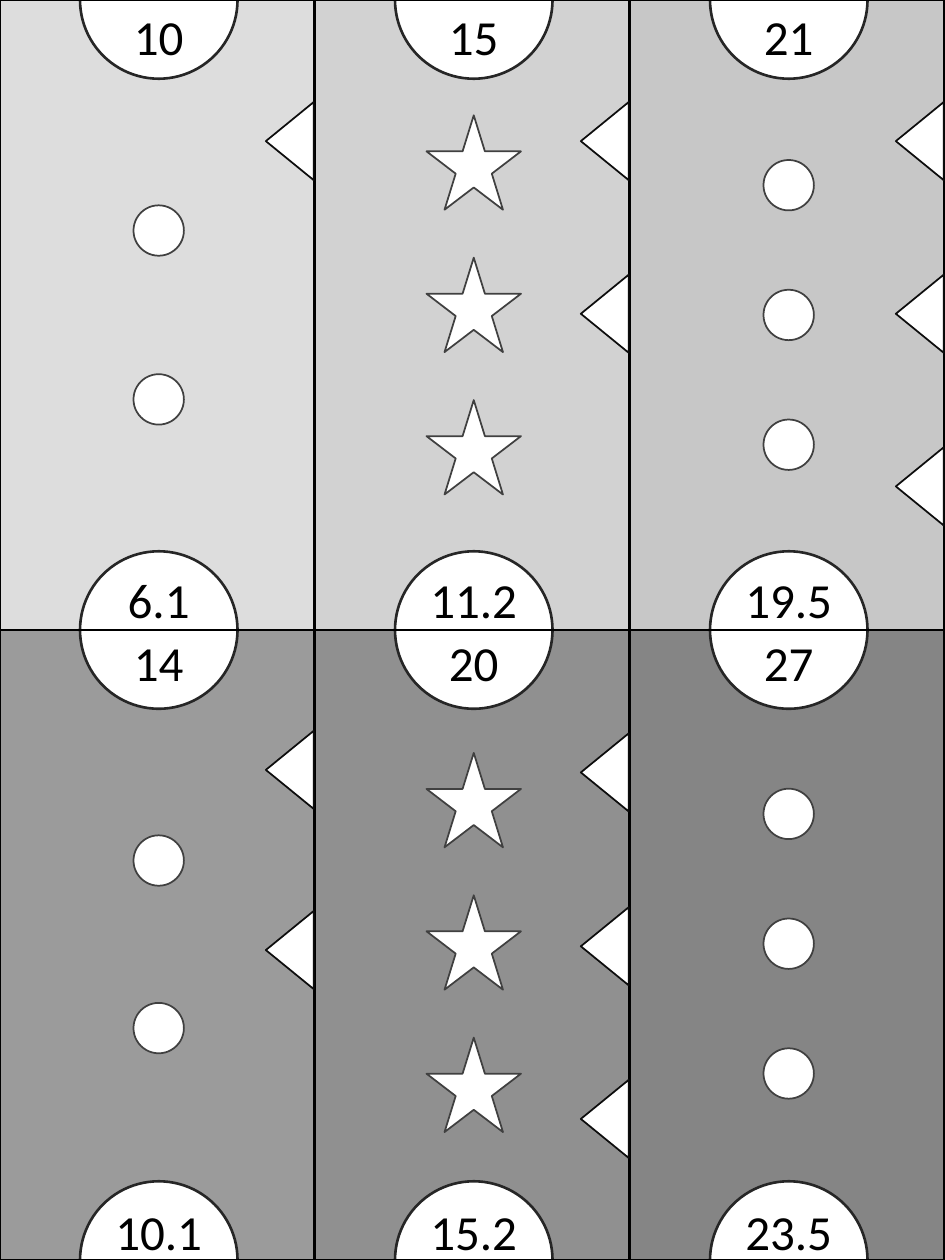
import dataclasses

import lxml.etree
import pptx
import pptx.dml.color
import pptx.enum.shapes
import pptx.enum.text
import pptx.oxml.ns
import pptx.util


@dataclasses.dataclass(frozen=True)
class Theme:
    shades: tuple = (("DDDDDD", "D2D2D2", "C7C7C7"), ("9B9B9B", "909090", "858585"))
    white: str = "FFFFFF"
    black: str = "000000"
    disc_line: str = "262626"
    marker_line: str = "404040"
    notch_line: str = "0D0D0D"
    font: str = "Calibri"
    number_size: float = 28
    thin: float = 1
    thick: float = 1.5


theme = Theme()
color = pptx.dml.color.RGBColor.from_string
inches = pptx.util.Inches
kinds = pptx.enum.shapes.MSO_SHAPE

deck = pptx.Presentation()
deck.slide_width, deck.slide_height = inches(7.5), inches(10)
page = deck.slides.add_slide(deck.slide_layouts[6])
column_width = deck.slide_width.inches / 3
row_height = deck.slide_height.inches / 2


def add_grid(left, shades):
    grid = page.shapes.add_table(
        2, 3, inches(left), 0, deck.slide_width, deck.slide_height
    ).table
    grid.first_row = grid.horz_banding = False
    for row in range(2):
        grid.rows[row].height = inches(row_height)
        for column in range(3):
            cell = grid.cell(row, column)
            properties = cell._tc.get_or_add_tcPr()
            for side in ("a:lnL", "a:lnR", "a:lnT", "a:lnB"):
                border = lxml.etree.SubElement(
                    properties, pptx.oxml.ns.qn(side), w=str(pptx.util.Pt(theme.thin))
                )
                paint = lxml.etree.SubElement(border, pptx.oxml.ns.qn("a:solidFill"))
                lxml.etree.SubElement(paint, pptx.oxml.ns.qn("a:srgbClr"), val=theme.black)
            if shades:
                cell.fill.solid()
                cell.fill.fore_color.rgb = color(shades[row][column])
            else:
                cell.fill.background()


def add_mark(kind, center_x, center_y, width, height, line, weight, rotation=0):
    mark = page.shapes.add_shape(
        kind,
        inches(center_x - width / 2),
        inches(center_y - height / 2),
        inches(width),
        inches(height),
    )
    mark.rotation = rotation
    mark.shadow.inherit = False
    mark.fill.solid()
    mark.fill.fore_color.rgb = color(theme.white)
    mark.line.color.rgb = color(line)
    mark.line.width = pptx.util.Pt(weight)


add_grid(0, theme.shades)
for row in range(3):
    for column in range(3):
        add_mark(
            kinds.OVAL, (column + 0.5) * column_width + 0.01, row * row_height,
            1.25, 1.25, theme.disc_line, theme.thick,
        )
add_grid(-0.01, None)

number_tops = ((0, 4.47), (-0.03, 4.49))
cards = (
    (0, 0, ("10", "6.1"), kinds.OVAL, 0.4, (1.83, 3.17), (1.12,)),
    (0, 1, ("15", "11.2"), kinds.STAR_5_POINT, 0.75, (1.29, 2.42, 3.55), (1.12, 2.49)),
    (0, 2, ("21", "19.5"), kinds.OVAL, 0.4, (1.47, 2.5, 3.53), (1.12, 2.49, 3.86)),
    (1, 0, ("14", "10.1"), kinds.OVAL, 0.4, (1.83, 3.16), (1.11, 2.54)),
    (1, 1, ("20", "15.2"), kinds.STAR_5_POINT, 0.75, (1.35, 2.48, 3.61), (1.13, 2.51, 3.88)),
    (1, 2, ("27", "23.5"), kinds.OVAL, 0.4, (1.46, 2.49, 3.52), ()),
)

for row, column, numbers, kind, size, marker_rows, notch_rows in cards:
    left, top = column * column_width, row * row_height
    middle = left + column_width / 2 + 0.01

    for center in marker_rows:
        add_mark(kind, middle, top + center, size, size, theme.marker_line, theme.thin)

    for center in notch_rows:
        add_mark(
            kinds.ISOSCELES_TRIANGLE, left + 2.3, top + center,
            0.62, 0.38, theme.notch_line, theme.thin, 270,
        )

    for number, offset in zip(numbers, number_tops[row]):
        width = 0.2 + 0.2 * len(number.replace(".", "")) + 0.1 * number.count(".")
        box = page.shapes.add_textbox(
            inches(middle - width / 2), inches(top + offset), inches(width), inches(0.57)
        )
        frame = box.text_frame
        frame.text = number
        frame.word_wrap = False
        frame.auto_size = pptx.enum.text.MSO_AUTO_SIZE.SHAPE_TO_FIT_TEXT
        para = frame.paragraphs[0]
        para.alignment = pptx.enum.text.PP_ALIGN.CENTER
        span = para.runs[0]
        span.font.name = theme.font
        span.font.size = pptx.util.Pt(theme.number_size)
        span.font.color.rgb = color(theme.black)

deck.save("out.pptx")
